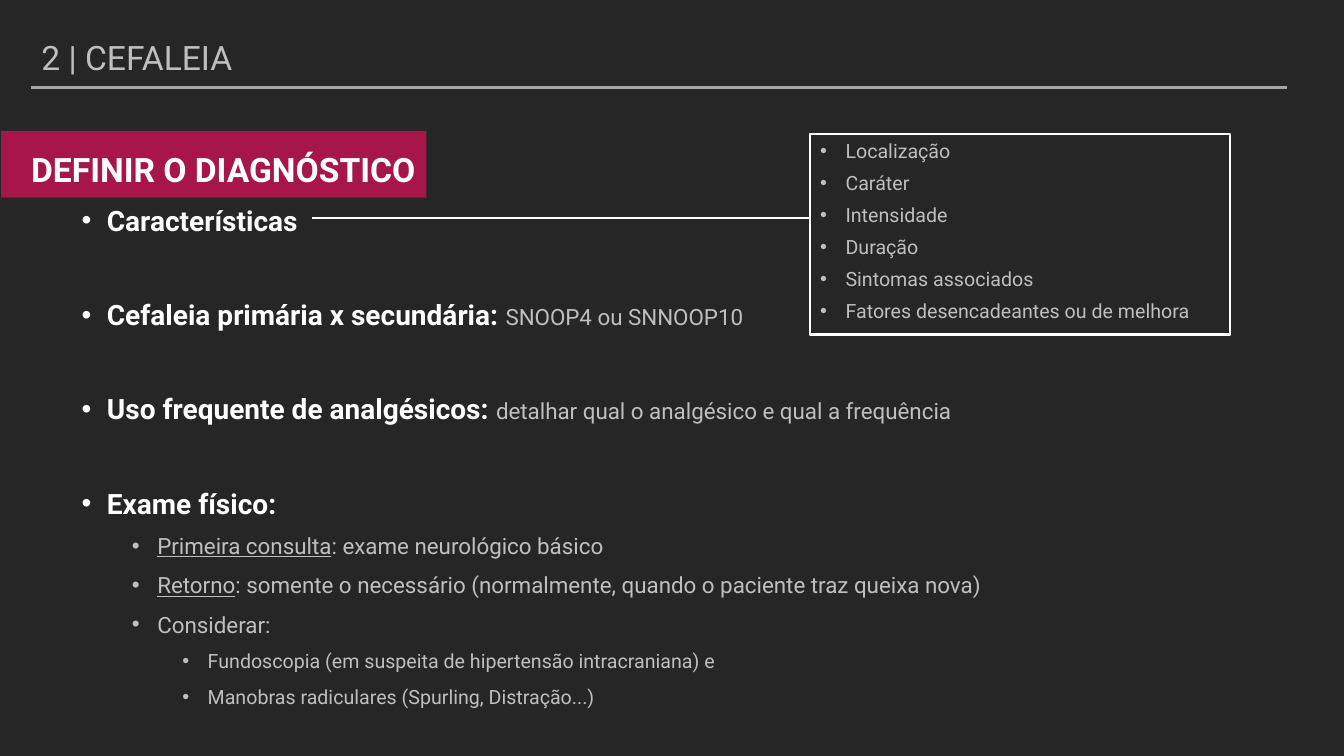
from dataclasses import dataclass

from lxml.etree import SubElement
from pptx import Presentation
from pptx.dml.color import RGBColor
from pptx.enum.shapes import MSO_CONNECTOR, MSO_SHAPE
from pptx.enum.text import MSO_ANCHOR, MSO_AUTO_SIZE, PP_ALIGN
from pptx.oxml.ns import qn
from pptx.util import Cm, Pt


@dataclass(frozen=True)
class Theme:
    font: str = "Roboto"
    background: str = "262626"
    accent: str = "A71549"
    strong: str = "FFFFFF"
    soft: str = "BFBFBF"
    rule: str = "A6A6A6"
    heading: int = 24
    topic: int = 20
    detail: int = 16
    small: int = 14


THEME = Theme()
BULLET_INDENT = 0.64
LEVEL_STEP = 1.27
TOPIC_GAP = 38.6

# Text of the slide: (level, [(text, kind of run), ...])
OUTLINE = [
    (0, [("DEFINIR O DIAGNÓSTICO", "heading")]),
    (1, [("Características", "topic")]),
    (1, [("Cefaleia primária x secundária: ", "topic"),
         ("SNOOP4 ou SNNOOP10", "detail")]),
    (1, [("Uso frequente de analgésicos: ", "topic"),
         ("detalhar qual o analgésico e qual a frequência", "detail")]),
    (1, [("Exame físico:", "topic")]),
    (2, [("Primeira consulta", "underlined"),
         (": exame neurológico básico", "detail")]),
    (2, [("Retorno", "underlined"),
         (": somente o necessário (normalmente, quando o paciente traz queixa nova)", "detail")]),
    (2, [("Considerar:", "detail")]),
    (3, [("Fundoscopia (em suspeita de hipertensão intracraniana) e", "small")]),
    (3, [("Manobras radiculares (Spurling, Distração...)", "small")]),
]
FEATURES = ["Localização", "Caráter", "Intensidade", "Duração",
            "Sintomas associados", "Fatores desencadeantes ou de melhora"]
RUN_STYLES = {
    "heading": dict(size=THEME.heading, color=THEME.strong, bold=True),
    "topic": dict(size=THEME.topic, color=THEME.strong, bold=True),
    "detail": dict(size=THEME.detail),
    "underlined": dict(size=THEME.detail, underline=True),
    "small": dict(size=THEME.small),
}


def rgb(value):
    return RGBColor.from_string(value)


def add_text(p, text, size, color=THEME.soft, bold=False, underline=False):
    r = p.add_run()
    r.text = text
    r.font.name = THEME.font
    r.font.size = Pt(size)
    r.font.color.rgb = rgb(color)
    r.font.bold = bold
    r.font.underline = underline


def format_paragraph(p, margin=0.0, bullet=False, before=0, spacing=1.0):
    pPr = p._p.get_or_add_pPr()
    pPr.set("marL", str(Cm(margin)))
    pPr.set("indent", str(-Cm(BULLET_INDENT) if bullet else 0))
    if bullet:
        SubElement(pPr, qn("a:buFont"), typeface="Arial")
        SubElement(pPr, qn("a:buChar"), char="•")
    else:
        SubElement(pPr, qn("a:buNone"))
    p.alignment = PP_ALIGN.LEFT
    p.line_spacing = spacing
    p.space_before = Pt(before)
    p.space_after = Pt(0)


def paragraphs(tf, items):
    """Yield (index, paragraph, item), reusing the frame's first paragraph."""
    for i, item in enumerate(items):
        yield i, tf.add_paragraph() if i else tf.paragraphs[0], item


def place(sp, box):
    sp.left, sp.top, sp.width, sp.height = map(Cm, box)


def prepare_frame(sp):
    tf = sp.text_frame
    tf.word_wrap = True
    tf.auto_size = MSO_AUTO_SIZE.NONE
    tf.vertical_anchor = MSO_ANCHOR.TOP
    return tf


def add_rect(s, box):
    sp = s.shapes.add_shape(MSO_SHAPE.RECTANGLE, *map(Cm, box))
    sp.shadow.inherit = False
    return sp


def add_rule(s, x, y, length, color, weight):
    line = s.shapes.add_connector(
        MSO_CONNECTOR.STRAIGHT, Cm(x), Cm(y), Cm(x + length), Cm(y))
    line.line.color.rgb = rgb(color)
    line.line.width = Pt(weight)
    SubElement(line._element.spPr, qn("a:effectLst"))


def add_header(s, box):
    x, y, width, height = box
    place(s.shapes.title, box)
    p = prepare_frame(s.shapes.title).paragraphs[0]
    format_paragraph(p)
    add_text(p, "2 | CEFALEIA", THEME.heading)
    add_rule(s, x, y + height + 0.13, width, THEME.rule, 2.25)


def add_outline(s, box):
    x, y, width, height = box
    # Coloured tag, kept behind the heading
    tag = add_rect(s, (0.03, y - 0.13, 10.72, 1.68))
    tag.fill.solid()
    tag.fill.fore_color.rgb = rgb(THEME.accent)
    tag.line.fill.background()
    s.shapes._spTree.insert(2, tag._element)

    # Heading and nested list
    body = s.placeholders[1]
    place(body, box)
    for i, p, (level, runs) in paragraphs(prepare_frame(body), OUTLINE):
        p.level = level
        before = 0 if i == 0 else TOPIC_GAP if level == 1 and i > 1 else 5
        margin = BULLET_INDENT + LEVEL_STEP * level if level else 0
        format_paragraph(p, margin, bullet=level > 0, before=before, spacing=1.2)
        for text, kind in runs:
            add_text(p, text, **RUN_STYLES[kind])


def add_features(s, box):
    x, y, width, height = box
    frame = add_rect(s, box)
    frame.fill.background()
    frame.line.color.rgb = rgb(THEME.strong)
    frame.line.width = Pt(1.5)
    for i, p, feature in paragraphs(prepare_frame(frame), FEATURES):
        format_paragraph(p, BULLET_INDENT, bullet=True, before=6 if i else 0)
        add_text(p, feature, THEME.small)
    # Link from the first topic to the frame
    reach = 12.55
    add_rule(s, x - reach, y + 2.11, reach, THEME.strong, 1.5)


def main():
    prs = Presentation()
    prs.slide_width, prs.slide_height = Cm(33.87), Cm(19.05)
    s = prs.slides.add_slide(prs.slide_layouts[1])
    s.background.fill.solid()
    s.background.fill.fore_color.rgb = rgb(THEME.background)
    add_header(s, (0.79, 0.81, 31.65, 1.27))
    add_outline(s, (0.53, 3.43, 32.72, 15.14))
    add_features(s, (20.42, 3.38, 10.57, 5.05))
    prs.save("out.pptx")


if __name__ == "__main__":
    main()
